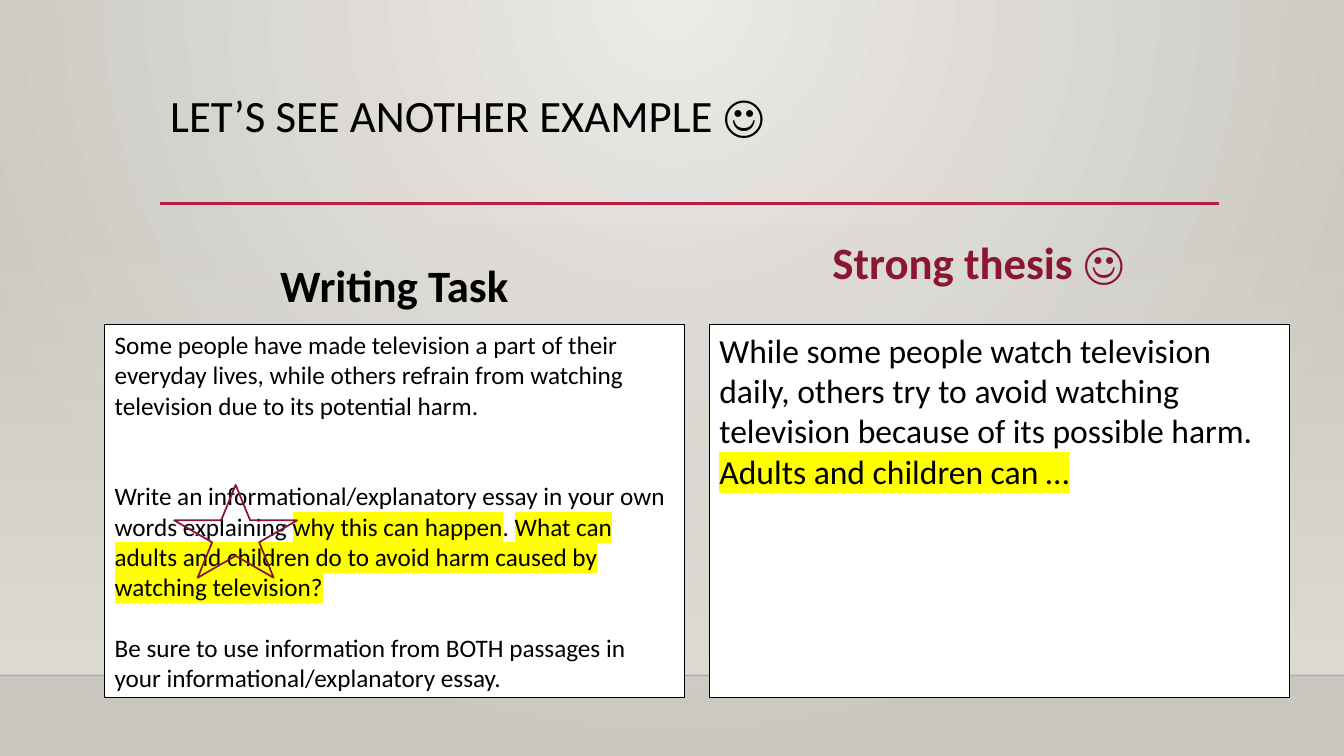
"""Build a slide that pairs a writing task with its strong thesis."""
from dataclasses import dataclass

from pptx import Presentation
from pptx.dml.color import RGBColor
from pptx.enum.shapes import MSO_CONNECTOR as Connector, MSO_SHAPE as Preset
from pptx.enum.text import MSO_ANCHOR as Anchor, PP_ALIGN as Align
from pptx.oxml import parse_xml
from pptx.oxml.ns import nsdecls, qn
from pptx.oxml.xmlchemy import OxmlElement
from pptx.shapes.autoshape import Shape
from pptx.slide import Slide
from pptx.util import Cm, Pt

COLORS = {
    "ink": "000000", "paper": "FFFFFF", "marker": "FFFF00",
    "rule": "B71E42", "star": "871631", "thesis": "891731",
    "wall": "DFDBD5", "glow": "ECEAE7", "edge": "CAC7C1", "floor": "000001",
}
SLIDE_WIDTH, SLIDE_HEIGHT = 33.87, 19.05
FLOOR_TOP = 17.02
PANEL_TOP, PANEL_WIDTH, PANEL_HEIGHT = 8.18, 14.61, 9.4
LINE_PITCH = 21.6


@dataclass
class Piece:
    text: str
    marked: bool = False


@dataclass
class Paragraph:
    pieces: list[Piece]
    before: float = 0


@dataclass
class Heading:
    text: str
    frame: tuple[float, float, float, float]
    color: str = "ink"
    bold: bool = True
    align: Align = Align.LEFT
    spacing: float = 1.0
    wrap: bool = True


@dataclass
class Panel:
    left: float
    size: float
    paragraphs: list[Paragraph]


@dataclass
class Rule:
    left: float
    right: float
    top: float
    width: float
    color: str
    alpha: int = 100


HEADINGS = [
    Heading("LET’S SEE ANOTHER EXAMPLE ☺", (4.04, 2.24, 26.67, 2.92),
            bold=False, spacing=0.9),
    Heading("Writing Task", (6.78, 6.38, 6.32, 2.39), align=Align.CENTER, wrap=False),
    Heading("Strong thesis ☺", (20.73, 5.79, 9.12, 1.63), color="thesis"),
]
PANELS = [
    Panel(2.64, 18, [
        Paragraph([Piece("Some people have made television a part of their everyday lives, "
                         "while others refrain from watching television due to its "
                         "potential harm.")]),
        Paragraph([Piece("Write an informational/explanatory essay in your own words "
                         "explaining "),
                   Piece("why this can happen", True),
                   Piece(". "),
                   Piece("What can adults and children do to avoid harm caused by "
                         "watching television?", True)], 2 * LINE_PITCH),
        Paragraph([Piece("Be sure to use information from BOTH passages in your "
                         "informational/explanatory essay.")], LINE_PITCH),
    ]),
    Panel(17.88, 24, [
        Paragraph([Piece("While some people watch television daily, others try to avoid "
                         "watching television because of its possible harm. "),
                   Piece("Adults and children can …", True)]),
    ]),
]
RULES = [
    Rule(0, SLIDE_WIDTH, FLOOR_TOP, 1, "floor", 20),
    Rule(4.04, 30.73, 5.13, 2.5, "rule"),
]


def rgb(name: str) -> RGBColor:
    return RGBColor.from_string(COLORS[name])


def gradient(stops: list[tuple[int, str, int]], direction: str) -> str:
    marks = "".join(
        f'<a:gs pos="{place * 1000}"><a:srgbClr val="{COLORS[color]}">'
        f'<a:alpha val="{alpha * 1000}"/></a:srgbClr></a:gs>'
        for place, color, alpha in stops)
    return (f'<a:gradFill {nsdecls("a")} rotWithShape="1">'
            f"<a:gsLst>{marks}</a:gsLst>{direction}</a:gradFill>")


def paint_background(page: Slide) -> None:
    fill = gradient([(0, "glow", 100), (100, "edge", 100)],
                    '<a:path path="circle"><a:fillToRect l="43000" t="0" '
                    'r="43000" b="100000"/></a:path>')
    page.element.cSld.insert(0, parse_xml(
        f'<p:bg {nsdecls("p", "a")}><p:bgPr>{fill}<a:effectLst/></p:bgPr></p:bg>'))


def add_box(page: Slide, preset: Preset, frame: tuple[float, ...]) -> Shape:
    box = page.shapes.add_shape(preset, *map(Cm, frame))
    box.shadow.inherit = False
    box.fill.background()
    box.line.fill.background()
    return box


def outline(box: Shape, color: str, width: float) -> None:
    box.line.color.rgb = rgb(color)
    box.line.width = Pt(width)


def add_wall(page: Slide) -> None:
    top = 5.61
    wall = add_box(page, Preset.RECTANGLE, (0, top, SLIDE_WIDTH, FLOOR_TOP - top))
    properties = wall.element.spPr
    fade = parse_xml(gradient([(0, "wall", 0), (100, "wall", 100)],
                              '<a:lin ang="5400000" scaled="0"/>'))
    properties.replace(properties.find(qn("a:noFill")), fade)


def add_rule(page: Slide, rule: Rule) -> None:
    line = page.shapes.add_connector(Connector.STRAIGHT, Cm(rule.left), Cm(rule.top),
                                     Cm(rule.right), Cm(rule.top))
    line.line.color.rgb = rgb(rule.color)
    line.line.width = Pt(rule.width)
    if rule.alpha < 100:
        alpha = OxmlElement("a:alpha")
        alpha.set("val", str(rule.alpha * 1000))
        next(line.element.spPr.iter(qn("a:srgbClr"))).append(alpha)
    line.element.spPr.append(OxmlElement("a:effectLst"))


def add_span(para, piece: Piece, size: float, color: str = "ink", bold: bool = False) -> None:
    span = para.add_run()
    span.text = piece.text
    font_format = {"name": "Calibri", "size": Pt(size), "bold": bold}
    for attribute, value in font_format.items():
        setattr(span.font, attribute, value)
    span.font.color.rgb = rgb(color)
    if piece.marked:
        highlight = parse_xml(f'<a:highlight {nsdecls("a")}>'
                              f'<a:srgbClr val="{COLORS["marker"]}"/></a:highlight>')
        next(span.font.fill._xPr.iter(qn("a:solidFill"))).addnext(highlight)


def add_heading(page: Slide, heading: Heading) -> None:
    box = page.shapes.add_textbox(*map(Cm, heading.frame))
    box.text_frame.word_wrap = heading.wrap
    para = box.text_frame.paragraphs[0]
    para.alignment = heading.align
    para.line_spacing = heading.spacing
    add_span(para, Piece(heading.text), 32, heading.color, heading.bold)


def add_panel(page: Slide, panel: Panel) -> None:
    box = add_box(page, Preset.RECTANGLE,
                  (panel.left, PANEL_TOP, PANEL_WIDTH, PANEL_HEIGHT))
    box.fill.solid()
    box.fill.fore_color.rgb = rgb("paper")
    outline(box, "ink", 0.75)
    frame = box.text_frame
    frame.word_wrap = True
    frame.vertical_anchor = Anchor.TOP
    for index, paragraph in enumerate(panel.paragraphs):
        para = frame.add_paragraph() if index else frame.paragraphs[0]
        para.alignment = Align.LEFT
        para.space_before = Pt(paragraph.before)
        for piece in paragraph.pieces:
            add_span(para, piece, panel.size)


def main() -> None:
    deck = Presentation()
    deck.slide_width, deck.slide_height = Cm(SLIDE_WIDTH), Cm(SLIDE_HEIGHT)
    page = deck.slides.add_slide(deck.slide_layouts[6])
    paint_background(page)
    add_wall(page)
    for rule in RULES:
        add_rule(page, rule)
    for heading in HEADINGS:
        add_heading(page, heading)
    for panel in PANELS:
        add_panel(page, panel)
    outline(add_box(page, Preset.STAR_5_POINT, (4.39, 12.22, 3.1, 2.34)), "star", 1.25)
    deck.save("out.pptx")


if __name__ == "__main__":
    main()
